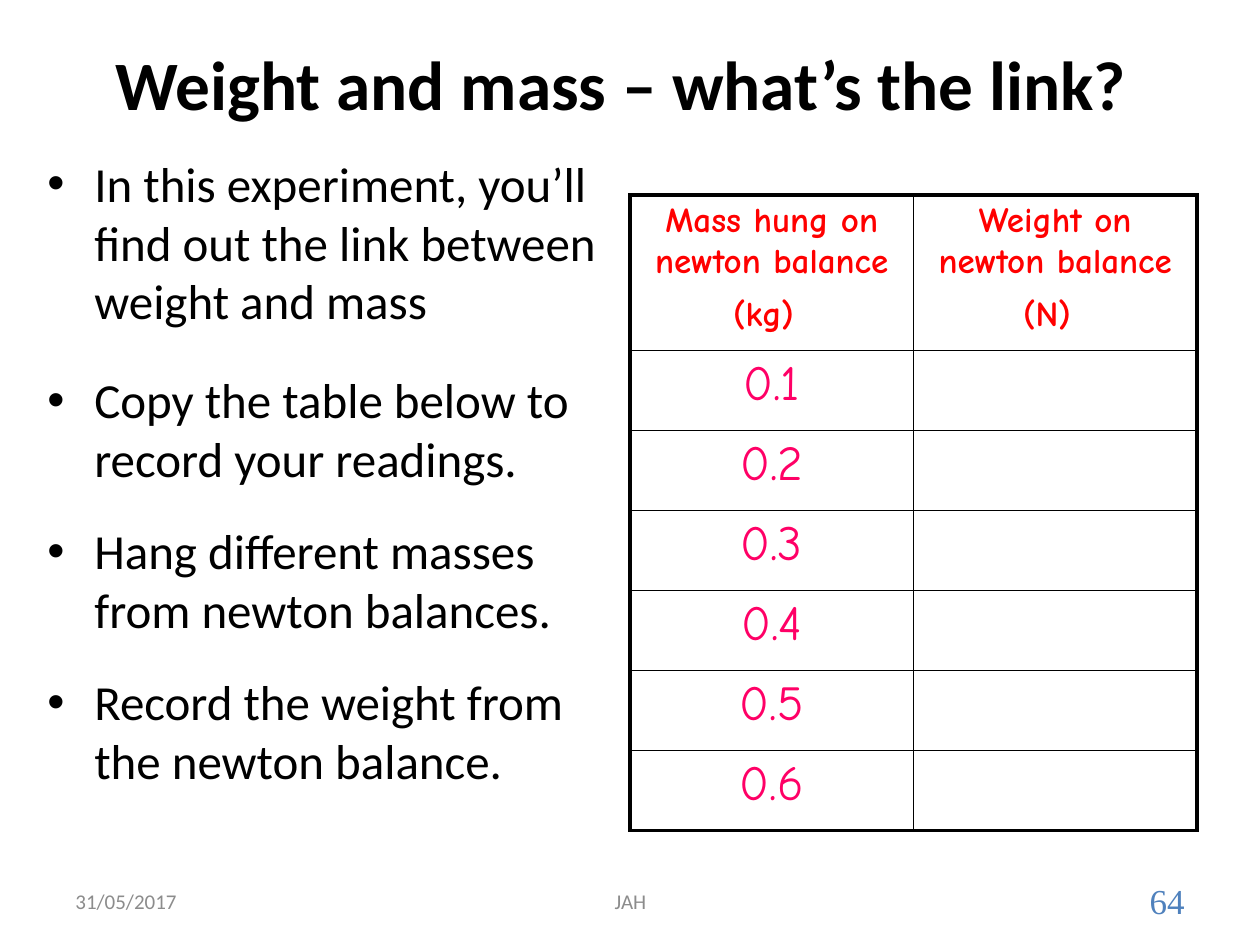
from dataclasses import dataclass

from lxml.etree import SubElement
from pptx import Presentation
from pptx.dml.color import RGBColor
from pptx.enum.text import MSO_ANCHOR as Anchor, PP_ALIGN as Align
from pptx.oxml.ns import qn
from pptx.util import Pt


@dataclass(frozen=True)
class Theme:
    sans: str = "Calibri"
    comic: str = "Comic Neue"
    serif: str = "Times New Roman"
    ink: str = "000000"
    paper: str = "FFFFFF"
    heading: str = "FF0000"
    reading: str = "FF0066"
    muted: str = "8C8C8C"
    number: str = "4F81BD"
    title_size: float = 39.6
    body_size: int = 28
    heading_size: int = 20
    number_size: int = 20
    footer_size: int = 12
    outer_line: float = 2.25
    inner_line: float = 1


THEME = Theme()
PX_PER_INCH = 126

STEPS = [
    ("In this experiment, you’ll find out the link between weight and mass", 0),
    ("Copy the table below to record your readings.", 23),
    ("Hang different masses from newton balances.", 19),
    ("Record the weight from the newton balance.", 19),
]
HEADINGS = ["Mass hung on newton balance (kg)", "Weight on newton balance (N)"]
MASSES = ["0.1", "0.2", "0.3", "0.4", "0.5", "0.6"]


def px(length):
    return round(length * 914400 / PX_PER_INCH)


def style(font, face, size, color, bold=False):
    font.name, font.size, font.bold = face, Pt(size), bold
    font.color.rgb = RGBColor.from_string(color)


def add_frame(slide, box, anchor=Anchor.MIDDLE):
    frame = slide.shapes.add_textbox(*map(px, box)).text_frame
    frame.word_wrap = True
    frame.vertical_anchor = anchor
    return frame


def add_line(slide, box, wording, align, face, size, color, bold=False):
    line = add_frame(slide, box).paragraphs[0]
    line.text, line.alignment = wording, align
    style(line.font, face, size, color, bold)


def add_steps(slide, box):
    frame = add_frame(slide, box, Anchor.TOP)
    for index, (wording, gap) in enumerate(STEPS):
        step = frame.add_paragraph() if index else frame.paragraphs[0]
        step.text, step.space_before = wording, Pt(gap)
        style(step.font, THEME.sans, THEME.body_size, THEME.ink)
        props = step._p.get_or_add_pPr()
        props.set("marL", str(px(47)))
        props.set("indent", str(-px(47)))
        SubElement(props, qn("a:buFont"), typeface="Arial")
        SubElement(props, qn("a:buChar"), char="•")


def set_borders(cell, outer_sides):
    props = cell._tc.get_or_add_tcPr()
    for side in "LRTB":
        width = THEME.outer_line if side in outer_sides else THEME.inner_line
        line = SubElement(props, qn(f"a:ln{side}"), w=str(Pt(width)))
        SubElement(SubElement(line, qn("a:solidFill")), qn("a:srgbClr"), val=THEME.ink)


def add_readings(slide, box):
    left, top, width, height = box
    header_height = 155
    row_count = len(MASSES) + 1
    table = slide.shapes.add_table(row_count, 2, *map(px, box)).table
    table.first_row = table.horz_banding = False
    for column in table.columns:
        column.width = px(width / 2)
    for index, row in enumerate(table.rows):
        row.height = px((height - header_height) / len(MASSES) if index else header_height)
        for side, cell in zip("LR", row.cells):
            edge = {0: "T", row_count - 1: "B"}.get(index, "")
            set_borders(cell, side + edge)
            cell.fill.solid()
            cell.fill.fore_color.rgb = RGBColor.from_string(THEME.paper)

    for column, wording in enumerate(HEADINGS):
        heading = table.cell(0, column).text_frame.paragraphs[0]
        heading.alignment = Align.CENTER
        label, spacer = heading.add_run(), heading.add_run()
        label.text, spacer.text = wording, " "
        style(label.font, THEME.comic, THEME.heading_size, THEME.heading, True)
        style(spacer.font, THEME.comic, THEME.body_size, THEME.heading)
    for row, mass in enumerate(MASSES, 1):
        reading = table.cell(row, 0).text_frame.paragraphs[0]
        reading.text, reading.alignment = mass, Align.CENTER
        style(reading.font, THEME.comic, THEME.body_size, THEME.reading)


def add_footer(slide, box):
    left, top, width, height = box
    small = (THEME.sans, THEME.footer_size, THEME.muted)
    add_line(slide, (left, top, 294, height), "31/05/2017", Align.LEFT, *small)
    add_line(slide, (left + 368, top, 399, height), "JAH", Align.CENTER, *small)
    add_line(slide, (left + width - 294, top, 294, height), "64", Align.RIGHT,
             THEME.serif, THEME.number_size, THEME.number)


def main():
    deck = Presentation()
    deck.slide_width, deck.slide_height = px(1260), px(945)
    slide = deck.slides.add_slide(deck.slide_layouts[6])
    add_line(slide, (54, 4, 1134, 158), "Weight and mass – what’s the link?",
             Align.CENTER, THEME.sans, THEME.title_size, THEME.ink, True)
    add_steps(slide, (35, 147, 595, 798))
    add_readings(slide, (630, 195, 567, 635))
    add_footer(slide, (63, 876, 1134, 50))
    deck.save("out.pptx")


if __name__ == "__main__":
    main()
